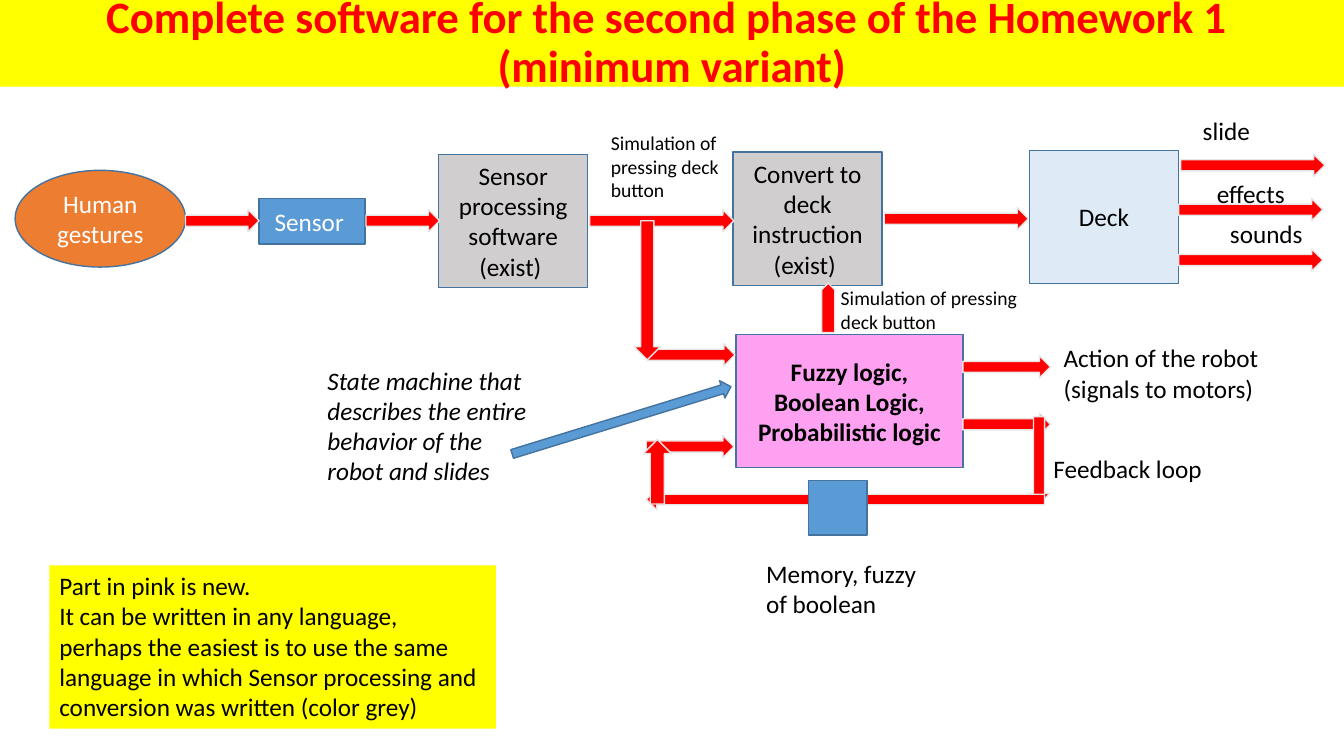
from dataclasses import dataclass

from pptx import Presentation
from pptx import util as u
from pptx.dml.color import RGBColor
from pptx.enum import shapes, text

COLORS = {
    "yellow": "FFFF00", "red": "FF0000", "grey": "D0CECE", "blue": "5B9BD5",
    "orange": "ED7D31", "pale": "DEEBF7", "pink": "FDA1F0", "outline": "43739E",
    "arrow_edge": "E7E6E6", "black": "000000", "white": "FFFFFF",
}
RECTANGLE = shapes.MSO_SHAPE.RECTANGLE
OVAL = shapes.MSO_SHAPE.OVAL
CENTER, LEFT = text.PP_ALIGN.CENTER, text.PP_ALIGN.LEFT
MIDDLE, TOP = text.MSO_ANCHOR.MIDDLE, text.MSO_ANCHOR.TOP
ARROW_HEIGHT = 0.22
BOX_SIZE = (1.48, 1.32)


@dataclass
class Box:
    at: tuple[float, float, float, float]
    fill: str
    words: str = ""
    color: str = "black"
    kind: shapes.MSO_SHAPE = RECTANGLE
    line: str | None = "outline"
    size: float = 18
    bold: bool = False
    align: text.PP_ALIGN = CENTER
    anchor: text.MSO_ANCHOR = MIDDLE
    spacing: float = 1.0


@dataclass
class Arrow:
    left: float
    top: float
    length: float
    height: float = ARROW_HEIGHT
    rotation: float = 0
    fill: str = "red"
    line: str = "arrow_edge"
    shaft: float = 0.5


@dataclass
class Label:
    at: tuple[float, float, float, float]
    words: str
    size: float = 18
    italic: bool = False


BOXES = [
    Box((0, 0, 13.33, 0.86), "yellow",
        "Complete software for the second phase of the Homework 1 \v(minimum variant)",
        "red", line=None, size=32, bold=True, spacing=0.9),
    Box((0.15, 1.69, 1.69, 0.96), "orange", "Human gestures", "white", OVAL),
    Box((2.57, 1.97, 1.05, 0.45), "blue", "Sensor ", "white"),
    Box((4.35, 1.53, *BOX_SIZE), "grey", "Sensor processing software (exist) "),
    Box((7.27, 1.51, *BOX_SIZE), "grey", "Convert to deck instruction (exist) "),
    Box((10.21, 1.49, *BOX_SIZE), "pale", "Deck"),
    Box((7.3, 3.32, 2.25, 1.32), "pink",
        "Fuzzy logic,\nBoolean Logic,\nProbabilistic logic", bold=True),
    Box((0.49, 5.61, 4.43, 1.62), "yellow",
        "Part in pink is new.\nIt can be written in any language, perhaps the easiest "
        "is to use the same language in which Sensor processing and conversion was "
        "written (color grey)", line=None, align=LEFT, anchor=TOP),
]
MEMORY = Box((8.02, 4.77, 0.58, 0.54), "blue")

ARROWS = [
    # Main chain
    Arrow(1.84, 2.08, 0.73),
    Arrow(3.63, 2.08, 0.73),
    Arrow(5.85, 2.08, 1.43),
    Arrow(8.77, 2.06, 1.43),
    # Presentation outputs
    Arrow(11.71, 1.53, 1.43),
    Arrow(11.69, 1.97, 1.43),
    Arrow(11.69, 2.47, 1.43),
    # Logic block inputs and outputs
    Arrow(6.42, 3.41, 0.87),
    Arrow(9.55, 3.53, 0.87),
    Arrow(9.55, 4.1, 0.87),
    Arrow(6.41, 4.32, 0.87),
    # Feedback loop
    Arrow(9.87, 4.46, 0.87, rotation=90),
    Arrow(6.41, 4.85, 3.95, 0.21, 180),
    Arrow(6.2, 4.54, 0.64, 0.28, 270),
    # Branches down from and up to the main chain
    Arrow(5.73, 2.75, 1.38, 0.26, 90),
    Arrow(7.97, 2.99, 0.49, 0.13, 270, shaft=1),
    # Pointer from the state machine
    Arrow(5.03, 4.08, 2.27, 0.18, 342.9, "blue", "outline"),
]

LABELS = [
    Label((5.96, 1.25, 1.54, 0.81), "Simulation of pressing deck button", 14),
    Label((11.83, 1.09, 0.89, 0.4), "slide"),
    Label((11.97, 1.72, 0.89, 0.4), "effects"),
    Label((12.1, 2.12, 1.02, 0.4), "sounds"),
    Label((10.35, 4.45, 2.03, 0.4), "Feedback loop"),
    Label((7.5, 5.49, 1.76, 0.71), "Memory, fuzzy of boolean"),
    Label((10.45, 3.35, 2.77, 0.71), "Action of the robot (signals to motors)"),
    Label((8.24, 2.79, 2.12, 0.57), "Simulation of pressing deck button", 14),
    Label((3.15, 3.57, 2.33, 1.31),
          "State machine that describes the entire behavior of the robot and slides",
          italic=True),
]


def rgb(name: str) -> RGBColor:
    return RGBColor.from_string(COLORS[name])


def apply(target, values: dict) -> None:
    for name, value in values.items():
        setattr(target, name, value)


def write(shape, words: str, color: str, frame_format: dict,
          paragraph_format: dict, font_format: dict) -> None:
    frame = shape.text_frame
    frame.text = words
    apply(frame, {"word_wrap": True, **frame_format})
    for paragraph in frame.paragraphs:
        apply(paragraph, paragraph_format)
        for run in paragraph.runs:
            apply(run.font, {"name": "Calibri", **font_format})
            run.font.color.rgb = rgb(color)


def add_filled(slide, kind: shapes.MSO_SHAPE, at: tuple, fill: str, line: str | None):
    shape = slide.shapes.add_shape(kind, *map(u.Inches, at))
    shape.shadow.inherit = False
    shape.fill.solid()
    shape.fill.fore_color.rgb = rgb(fill)
    if line:
        shape.line.color.rgb = rgb(line)
        shape.line.width = u.Pt(1)
    else:
        shape.line.fill.background()
    return shape


def draw_box(slide, box: Box) -> None:
    shape = add_filled(slide, box.kind, box.at, box.fill, box.line)
    if box.words:
        write(shape, box.words, box.color, {"vertical_anchor": box.anchor},
              {"alignment": box.align, "line_spacing": box.spacing},
              {"size": u.Pt(box.size), "bold": box.bold})


def draw_arrow(slide, arrow: Arrow) -> None:
    at = (arrow.left, arrow.top, arrow.length, arrow.height)
    shape = add_filled(slide, shapes.MSO_SHAPE.RIGHT_ARROW, at, arrow.fill, arrow.line)
    shape.rotation = arrow.rotation
    shape.adjustments[0] = arrow.shaft


def draw_label(slide, label: Label) -> None:
    shape = slide.shapes.add_textbox(*map(u.Inches, label.at))
    write(shape, label.words, "black",
          {"auto_size": text.MSO_AUTO_SIZE.SHAPE_TO_FIT_TEXT}, {"alignment": LEFT},
          {"size": u.Pt(label.size), "italic": label.italic})


def main() -> None:
    presentation = Presentation()
    apply(presentation, {"slide_width": u.Inches(13.33), "slide_height": u.Inches(7.5)})
    slide = presentation.slides.add_slide(presentation.slide_layouts[6])
    for box in BOXES:
        draw_box(slide, box)
    for arrow in ARROWS:
        draw_arrow(slide, arrow)
    # The memory sits on top of the feedback arrow
    draw_box(slide, MEMORY)
    for label in LABELS:
        draw_label(slide, label)
    presentation.save("out.pptx")


if __name__ == "__main__":
    main()
